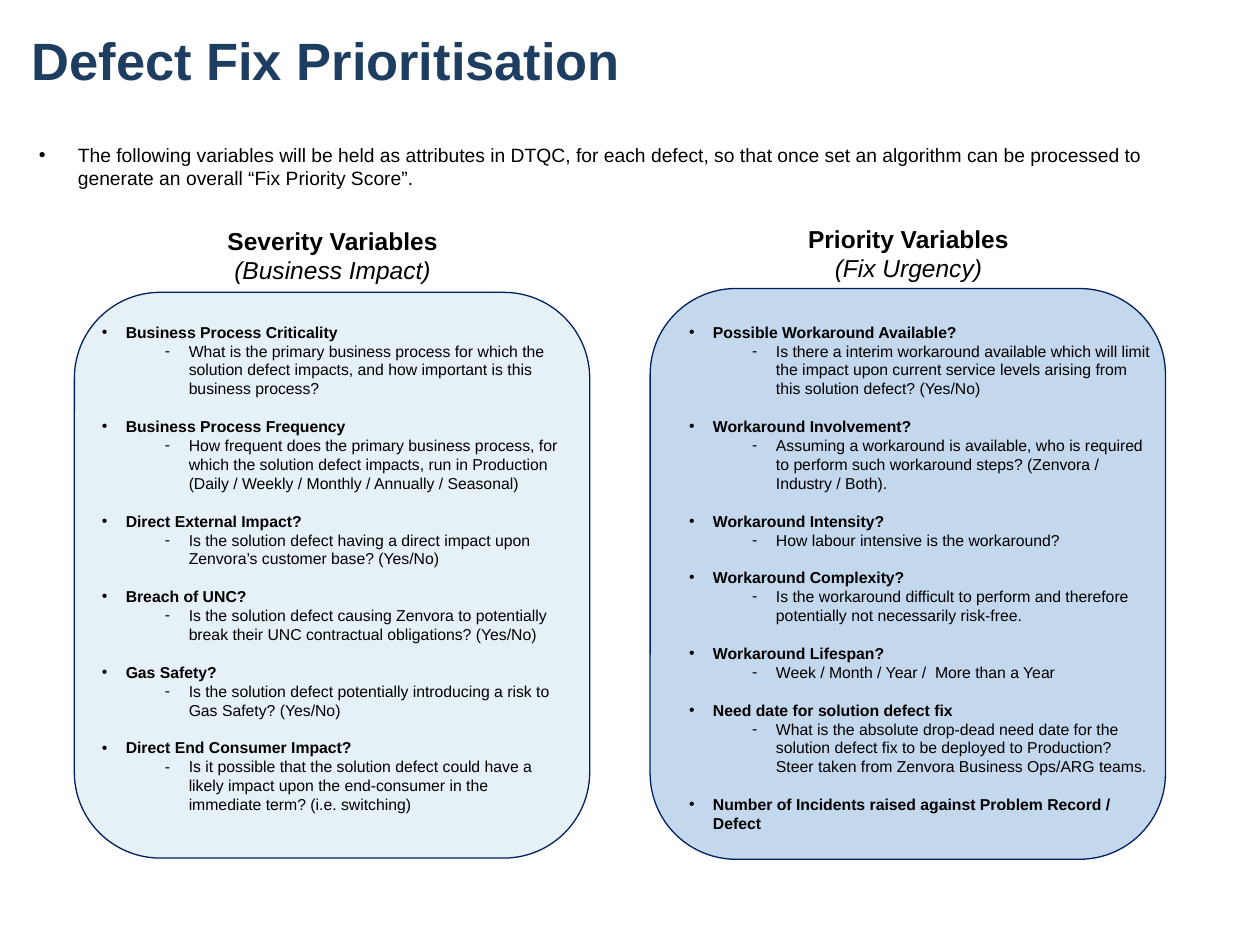
from lxml import etree
from pptx import Presentation
from pptx import util as u
from pptx.dml.color import RGBColor
from pptx.enum import shapes, text
from pptx.oxml import ns

NAVY = RGBColor(0x1D, 0x3E, 0x61)
OUTLINE = RGBColor(0x00, 0x20, 0x60)
BLACK = RGBColor(0x00, 0x00, 0x00)
PALE_BLUE = RGBColor(0xCE, 0xE3, 0xF0)
MID_BLUE = RGBColor(0x89, 0xB1, 0xDC)

presentation = Presentation()
presentation.slide_width, presentation.slide_height = u.Inches(10), u.Inches(7.5)
COLUMN = presentation.slide_width / 100
ROW = presentation.slide_height / 75
LINE = u.Pt(10.8)


def place(left, top, width, height):
    """Turn grid columns and rows into slide lengths."""
    return [int(left * COLUMN), int(top * ROW), int(width * COLUMN), int(height * ROW)]


def add_text(paragraph, words, size, color=BLACK, bold=False, italic=False,
             bullet=None, margin=0, hanging=0):
    if bullet:
        properties = paragraph._p.get_or_add_pPr()
        properties.set("marL", str(int(margin * COLUMN)))
        properties.set("indent", str(int(-hanging * COLUMN)))
        font = etree.SubElement(properties, ns.qn("a:buFont"))
        font.set("typeface", "Arial")
        etree.SubElement(properties, ns.qn("a:buChar")).set("char", bullet)
    run = paragraph.add_run()
    run.text = words
    run.font.name, run.font.size = "Arial", u.Pt(size)
    run.font.bold, run.font.italic = bold, italic
    run.font.color.rgb = color


slide = presentation.slides.add_slide(presentation.slide_layouts[5])
title = slide.shapes.title
title.left, title.top, title.width, title.height = place(2.5, -0.6, 95, 10.6)
frame = title.text_frame
frame.margin_left = frame.margin_top = frame.margin_right = frame.margin_bottom = 0
frame.vertical_anchor = text.MSO_ANCHOR.MIDDLE
frame.paragraphs[0].alignment = text.PP_ALIGN.LEFT
add_text(frame.paragraphs[0], "Defect Fix Prioritisation", 30, NAVY, bold=True)

intro = slide.shapes.add_textbox(*place(2.1, 10.8, 95.7, 4.7)).text_frame
intro.word_wrap = True
intro.paragraphs[0].line_spacing = u.Pt(13.6)
add_text(intro.paragraphs[0],
         "The following variables will be held as attributes in DTQC, for each defect, "
         "so that once set an algorithm can be processed to generate an overall "
         "“Fix Priority Score”.", 11, bullet="•", margin=3.1, hanging=3.1)

severity_variables = [
    ("Business Process Criticality",
     "What is the primary business process for which the solution defect impacts, "
     "and how important is this business process?"),
    ("Business Process Frequency",
     "How frequent does the primary business process, for which the solution defect "
     "impacts, run in Production (Daily / Weekly / Monthly / Annually / Seasonal)"),
    ("Direct External Impact?",
     "Is the solution defect having a direct impact upon Zenvora’s customer base? (Yes/No)"),
    ("Breach of UNC?",
     "Is the solution defect causing Zenvora to potentially break their UNC contractual "
     "obligations? (Yes/No)"),
    ("Gas Safety?",
     "Is the solution defect potentially introducing a risk to Gas Safety? (Yes/No)"),
    ("Direct End Consumer Impact?",
     "Is it possible that the solution defect could have a likely impact upon the "
     "end-consumer in the immediate term? (i.e. switching)"),
]
priority_variables = [
    ("Possible Workaround Available?",
     "Is there a interim workaround available which will limit the impact upon current "
     "service levels arising from this solution defect? (Yes/No)"),
    ("Workaround Involvement?",
     "Assuming a workaround is available, who is required to perform such workaround "
     "steps? (Zenvora / Industry / Both)."),
    ("Workaround Intensity?", "How labour intensive is the workaround?"),
    ("Workaround Complexity?",
     "Is the workaround difficult to perform and therefore potentially not necessarily "
     "risk-free."),
    ("Workaround Lifespan?", "Week / Month / Year /  More than a Year"),
    ("Need date for solution defect fix",
     "What is the absolute drop-dead need date for the solution defect fix to be deployed "
     "to Production? Steer taken from Zenvora Business Ops/ARG teams."),
    ("Number of Incidents raised against Problem Record / Defect", None),
]

# heading, subheading, heading place, panel place, fill, list place, variables
panels = [
    ("Severity Variables ", "(Business Impact)", (16.3, 17.5, 20.2, 5.7),
     (5.9, 23.2, 40.9, 44.9), PALE_BLUE, (7.1, 25.1, 38.6, 41.9), severity_variables),
    ("Priority Variables ", "(Fix Urgency)", (62, 17.3, 20.2, 5.7),
     (51.6, 22.9, 40.9, 45.3), MID_BLUE, (53.7, 25.1, 38.8, 43.4), priority_variables),
]
for heading, subheading, heading_place, panel_place, fill, list_place, variables in panels:
    panel = slide.shapes.add_shape(shapes.MSO_SHAPE.ROUNDED_RECTANGLE, *place(*panel_place))
    panel.shadow.inherit = False
    panel.fill.solid()
    panel.fill.fore_color.rgb = fill
    color = panel.fill._xPr.find(".//" + ns.qn("a:srgbClr"))
    etree.SubElement(color, ns.qn("a:alpha")).set("val", "50000")
    panel.line.color.rgb, panel.line.width = OUTLINE, u.Pt(0.75)

    frame = slide.shapes.add_textbox(*place(*heading_place)).text_frame
    frame.word_wrap = True
    paragraph = frame.paragraphs[0]
    paragraph.alignment, paragraph.line_spacing = text.PP_ALIGN.CENTER, u.Pt(16.6)
    add_text(paragraph, heading, 14, bold=True)
    add_text(paragraph, subheading, 14, italic=True)

    frame = slide.shapes.add_textbox(*place(*list_place)).text_frame
    frame.word_wrap = True
    for index, (variable, question) in enumerate(variables):
        paragraph = frame.add_paragraph() if index else frame.paragraphs[0]
        paragraph.line_spacing = LINE
        if index:
            paragraph.space_before = LINE
        add_text(paragraph, variable, 9, bold=True, bullet="•", margin=1.9, hanging=1.9)
        if question:
            paragraph = frame.add_paragraph()
            paragraph.level, paragraph.line_spacing = 1, LINE
            add_text(paragraph, question, 9, bullet="-", margin=6.9, hanging=1.9)

presentation.save("out.pptx")
